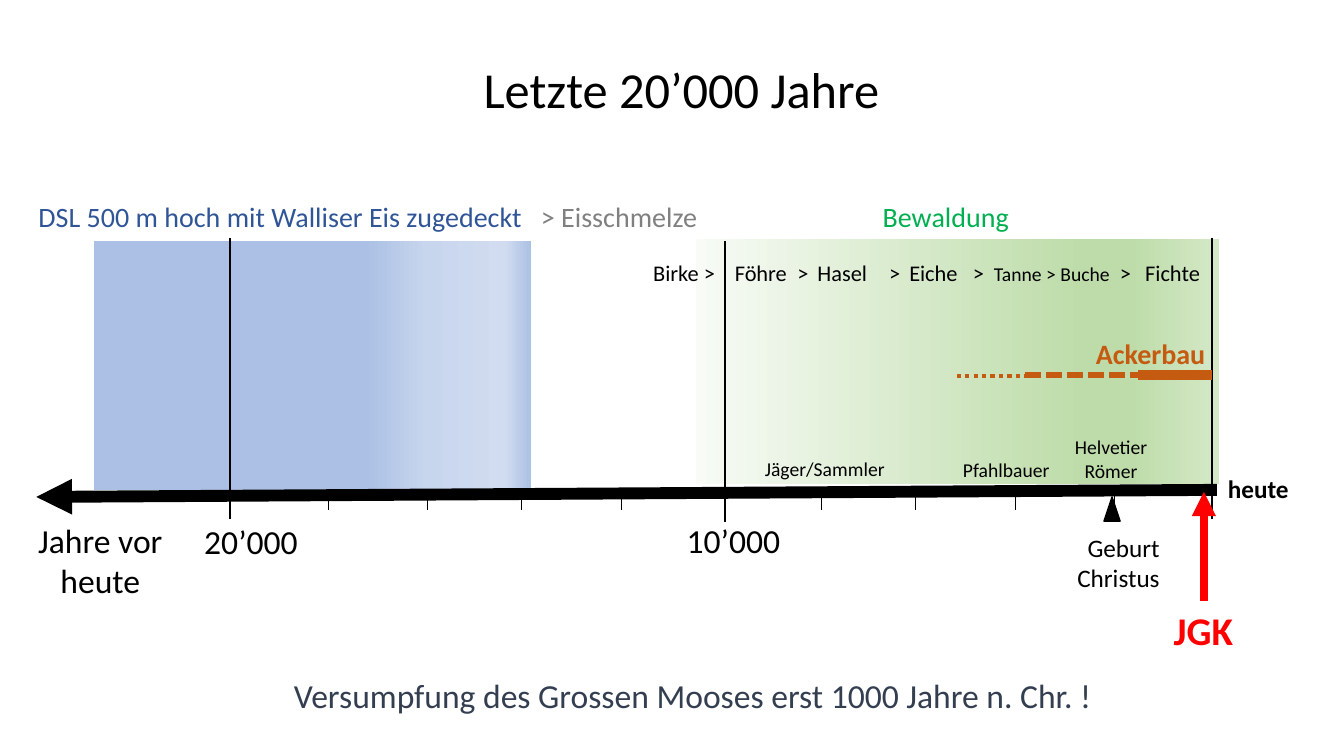
"""Timeline slide of the last 20,000 years."""
from lxml.etree import SubElement as Sub
from pptx import Presentation
from pptx.dml.color import RGBColor
from pptx.enum.dml import MSO_LINE as DASH
from pptx.enum.shapes import MSO_CONNECTOR as CONN, MSO_SHAPE as SHAPE
from pptx.enum.text import MSO_AUTO_SIZE as AUTO, PP_ALIGN as ALIGN
from pptx.oxml.ns import qn
from pptx.util import Emu, Pt

SCALE = 9144
FONT = "Calibri"
BLACK, RED, BROWN = "000000", "FF0000", "C55A11"
L, C, R = ALIGN.LEFT, ALIGN.CENTER, ALIGN.RIGHT

# left, top, width, height, angle, stops
ERAS = [
    (690, 237, 519, 243, 0,
     [(0, "F8FBF6"), (74, "BEDCAA"), (83, "BEDCAA"), (100, "D4E8C6")]),
    (93, 239, 434, 247, 180,
     [(0, "ABC0E4"), (6, "D1DCF0"), (24, "C7D5ED"), (38, "ABC0E4")]),
]
TICKS = [325, 424, 517, 616, 814, 908, 1007, 1105]
MARKS = [(228, 236), (719, 239), (1202, 236)]
TICK_TOP, TICK_LEN, MARK_LEN = 489, 17, 279
# x1, y1, x2, y2, colour, points, dash, arrow
AXIS = (1207, 486, 36, 493, BLACK, 8.5, None, True)
BARS = [
    (1194, 596, 1194, 488, RED, 5.75, None, True),
    (1017, 372, 1163, 372, BROWN, 3.75, DASH.SQUARE_DOT, False),
    (1129, 372, 1202, 372, BROWN, 7.75, None, False),
    (949, 373, 1028, 373, BROWN, 3, DASH.ROUND_DOT, False),
]
BIRTH = (1095, 493, 16, 24)
# text, left, top, width, height, align, points, colour, bold
LABELS = [
    ("Versumpfung des Grossen Mooses erst 1000 Jahre n. Chr. !",
     262, 665, 850, 50, C, 24, "333F50", False),
    ("Geburt\nChristus", 1048, 523, 112, 71, R, 18, BLACK, False),
    ("heute", 1208, 465, 99, 40, L, 18, BLACK, True),
    ("JGK", 1152, 597, 83, 57, C, 28, RED, True),
    ("20’000", 166, 512, 166, 50, C, 24, BLACK, False),
    ("Jahre vor heute", 14, 511, 171, 91, C, 24, BLACK, False),
    ("10’000", 626, 511, 203, 50, C, 24, BLACK, False),
    ("DSL 500 m hoch mit Walliser Eis zugedeckt",
     14, 193, 528, 44, C, 20, "2F5597", False),
    ("Helvetier\nRömer", 1016, 427, 172, 57, C, 14, BLACK, False),
    ("Pfahlbauer", 912, 449, 172, 34, C, 14, BLACK, False),
    ("Jäger/Sammler", 732, 448, 172, 34, C, 14, BLACK, False),
    ("Ackerbau", 1077, 329, 339, 44, L, 20, BROWN, True),
    ("Letzte 20’000 Jahre", 262, 53, 828, 71, C, 36, BLACK, False),
    ("Bewaldung", 667, 193, 542, 44, C, 20, "00B050", False),
    ("> Eisschmelze", 521, 193, 186, 44, C, 20, "808080", False),
]
TREES = [("Birke >\tFöhre\t>\tHasel\t>\tEiche\t>\t", 16),
         ("Tanne > Buche", 14), ("\t>\tFichte", 16)]
TREE_BOX = (638, 252, 567, 37)
STOPS = [81, 143, 163, 234, 254, 317, 338, 463, 488]


def px(*nums):
    return [Emu(n * SCALE) for n in nums]


def rgb(code):
    return RGBColor.from_string(code)


def style(run, size, code, bold=False):
    font = run.font
    font.name, font.size, font.bold = FONT, Pt(size), bold
    font.color.rgb = rgb(code)


def text_box(shapes, *box):
    frame = shapes.add_textbox(*px(*box)).text_frame
    frame.word_wrap = True
    frame.auto_size = AUTO.SHAPE_TO_FIT_TEXT
    return frame.paragraphs[0]


def add_label(shapes, text, x, y, w, h, align, size, code, bold):
    para = text_box(shapes, x, y, w, h)
    para.text, para.alignment = text, align
    for run in para.runs:
        style(run, size, code, bold)


def add_trees(shapes):
    para = text_box(shapes, *TREE_BOX)
    tabs = Sub(para._p.get_or_add_pPr(), qn("a:tabLst"))
    for stop in STOPS:
        Sub(tabs, qn("a:tab"), pos=str(stop * SCALE), algn="l")
    for text, size in TREES:
        run = para.add_run()
        run.text = text
        style(run, size, BLACK)


def add_era(shapes, x, y, w, h, angle, stops):
    era = shapes.add_shape(SHAPE.RECTANGLE, *px(x, y, w, h))
    era.shadow.inherit = False
    era.line.fill.background()
    era.fill.gradient()
    era.fill.gradient_angle = angle
    grad = era._element.spPr.find(qn("a:gradFill")).find(qn("a:gsLst"))
    for old in list(grad):
        grad.remove(old)
    for pos, code in stops:
        stop = Sub(grad, qn("a:gs"), pos=str(pos * 1000))
        Sub(stop, qn("a:srgbClr"), val=code)


def add_line(shapes, x1, y1, x2, y2, code, width, dash=None, arrow=False):
    conn = shapes.add_connector(CONN.STRAIGHT, *px(x1, y1, x2, y2))
    line = conn.line
    line.color.rgb, line.width = rgb(code), Pt(width)
    if dash:
        line.dash_style = dash
    if arrow:
        Sub(line._get_or_add_ln(), qn("a:tailEnd"), type="triangle")
    Sub(conn._element.spPr, qn("a:effectLst"))


def main():
    deck = Presentation()
    deck.slide_width, deck.slide_height = px(1333, 750)
    shapes = deck.slides.add_slide(deck.slide_layouts[6]).shapes
    for era in ERAS:
        add_era(shapes, *era)
    add_line(shapes, *AXIS)
    for x in TICKS:
        add_line(shapes, x, TICK_TOP, x, TICK_TOP + TICK_LEN, BLACK, 0.25)
    for x, y in MARKS:
        add_line(shapes, x, y, x, y + MARK_LEN, BLACK, 1.5)
    birth = shapes.add_shape(SHAPE.ISOSCELES_TRIANGLE, *px(*BIRTH))
    birth.shadow.inherit = False
    birth.fill.solid()
    birth.fill.fore_color.rgb = birth.line.color.rgb = rgb(BLACK)
    birth.line.width = Pt(1)
    for bar in BARS:
        add_line(shapes, *bar)
    for label in LABELS:
        add_label(shapes, *label)
    add_trees(shapes)
    deck.save("out.pptx")


if __name__ == "__main__":
    main()
